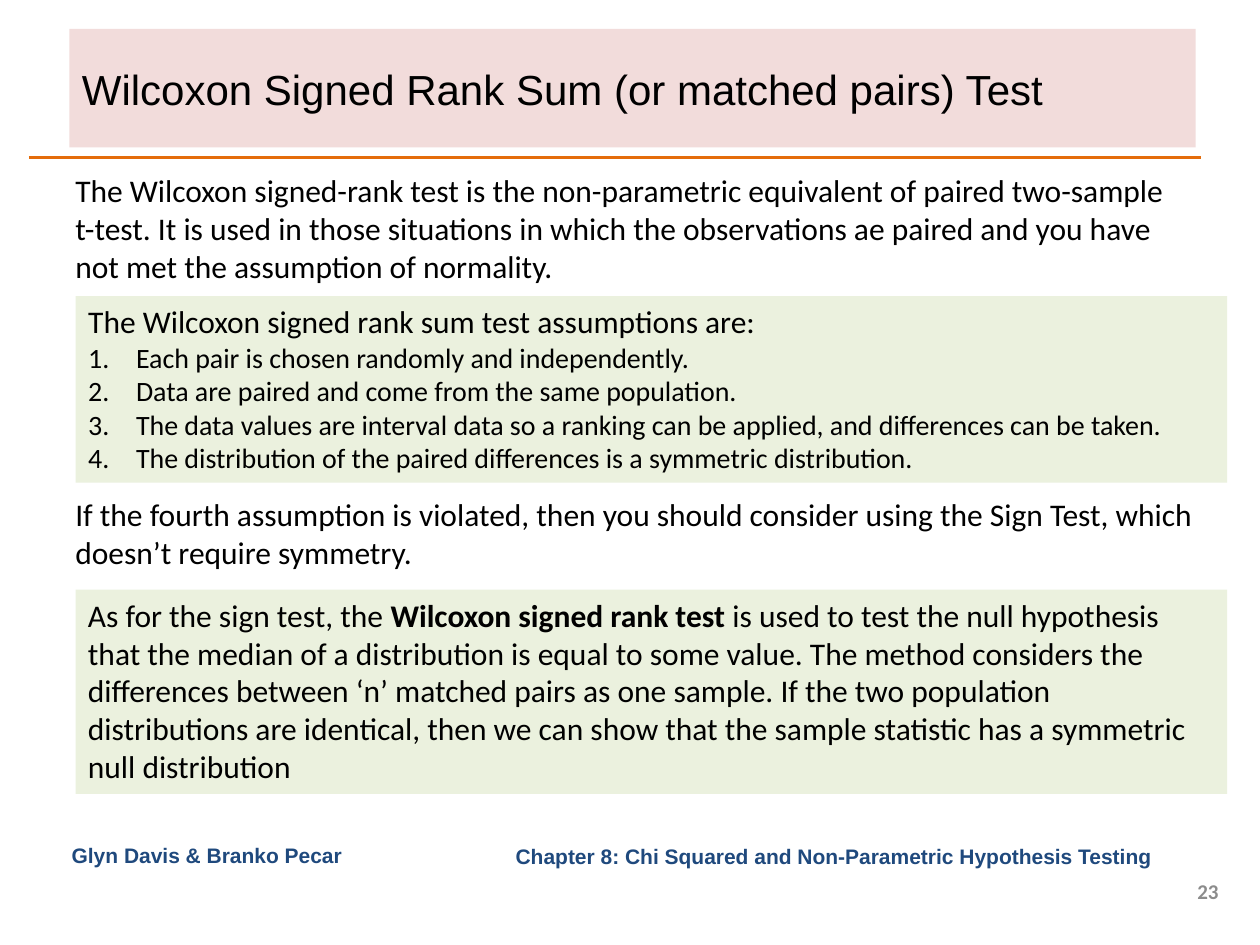
from lxml.etree import SubElement
from pptx import Presentation
from pptx.dml.color import RGBColor
from pptx.enum.shapes import MSO_CONNECTOR
from pptx.enum.text import MSO_ANCHOR, MSO_AUTO_SIZE, PP_ALIGN
from pptx.oxml.ns import qn
from pptx.util import Inches, Pt

COLORS = {"black": "000000", "rose": "F2DCDB", "sage": "EBF1DE",
          "orange": "E46C0A", "navy": "1F497D", "grey": "8C8C8C"}

presentation = Presentation()
presentation.slide_width, presentation.slide_height = Inches(10), Inches(7.5)
slide = presentation.slides.add_slide(presentation.slide_layouts[1])
shapes = slide.shapes
cell = presentation.slide_width / 100  # grid of 100 columns by 75 rows

TEXT_LEFT, PANEL_LEFT, PANEL_WIDTH = 5, 6, 91.4


def place(shape, left, top, width, height, fill=None, anchor=MSO_ANCHOR.TOP):
    """Set a shape's grid position, fill and text frame; return the frame."""
    shape.left, shape.top = int(left * cell), int(top * cell)
    shape.width, shape.height = int(width * cell), int(height * cell)
    if fill:
        shape.fill.solid()
        shape.fill.fore_color.rgb = RGBColor.from_string(COLORS[fill])
    frame = shape.text_frame
    frame.word_wrap = True
    frame.auto_size = MSO_AUTO_SIZE.NONE
    frame.vertical_anchor = anchor
    return frame


def add_run(paragraph, text, size=18, font="Calibri", color="black", bold=False):
    run = paragraph.add_run()
    run.text = text
    run.font.size, run.font.name, run.font.bold = Pt(size), font, bold
    run.font.color.rgb = RGBColor.from_string(COLORS[color])


# Title band and rule
title = place(shapes.title, 5.5, 2.3, 89.4, 9.4, "rose", MSO_ANCHOR.MIDDLE)
title.paragraphs[0].alignment = PP_ALIGN.LEFT
add_run(title.paragraphs[0], "Wilcoxon Signed Rank Sum (or matched pairs) Test", 24, "Arial")

rule = shapes.add_connector(MSO_CONNECTOR.STRAIGHT, int(2.3 * cell), int(12.5 * cell),
                            int(95.3 * cell), int(12.5 * cell))
rule.line.color.rgb = RGBColor.from_string(COLORS["orange"])
rule.line.width = Pt(2)
SubElement(rule._element.spPr, qn("a:effectLst"))

# Assumptions: a heading followed by a numbered list
assumptions = place(slide.placeholders[1], PANEL_LEFT, 23.5, PANEL_WIDTH, 14.8, "sage")
lines = ["The Wilcoxon signed rank sum test assumptions are:",
         "Each pair is chosen randomly and independently.",
         "Data are paired and come from the same population.",
         "The data values are interval data so a ranking can be applied, and differences can be taken.",
         "The distribution of the paired differences is a symmetric distribution."]
for number, line in enumerate(lines):
    paragraph = assumptions.paragraphs[0] if number == 0 else assumptions.add_paragraph()
    paragraph.space_before = Pt(0)
    add_run(paragraph, line, 16 if number else 18)
    properties = paragraph._p.get_or_add_pPr()
    indent = Inches(0.38) if number else 0
    properties.set("marL", str(indent))
    properties.set("indent", str(-indent))
    if number:
        SubElement(properties, qn("a:buFont"), typeface="+mj-lt")
        SubElement(properties, qn("a:buAutoNum"), type="arabicPeriod")
    else:
        SubElement(properties, qn("a:buNone"))

# Running text, one box per passage: position, fill, runs as (text, bold)
passages = [
    ((TEXT_LEFT, 13.1, 89.4, 10.1), None, [
        ("The Wilcoxon signed-rank test is the non-parametric equivalent of paired two-sample "
         "t-test. It is used in those situations in which the observations ae paired and you have "
         "not met the assumption of normality.", False)]),
    ((TEXT_LEFT, 38.8, PANEL_WIDTH, 7.1), None, [
        ("If the fourth assumption is violated, then you should consider using the Sign Test, "
         "which doesn’t require symmetry.", False)]),
    ((PANEL_LEFT, 46.8, PANEL_WIDTH, 16.2), "sage", [
        ("As for the sign test, the ", False),
        ("Wilcoxon signed rank test", True),
        (" is used to test the null hypothesis that the median of a distribution is equal to some "
         "value. The method considers the differences between ‘n’ matched pairs as one sample. If "
         "the two population distributions are identical, then we can show that the sample "
         "statistic has a symmetric null distribution", False)]),
]
for position, fill, runs in passages:
    frame = place(shapes.add_textbox(0, 0, 0, 0), *position, fill)
    for text, bold in runs:
        add_run(frame.paragraphs[0], text, bold=bold)

# Footer: authors, chapter and slide number
footers = [
    ((4.7, 66.4, 28.1, 3.1), MSO_ANCHOR.TOP, PP_ALIGN.LEFT,
     "Glyn Davis & Branko Pecar", "Arial", "navy"),
    ((32, 66.4, 60.9, 3.1), MSO_ANCHOR.MIDDLE, PP_ALIGN.RIGHT,
     "Chapter 8: Chi Squared and Non-Parametric Hypothesis Testing ", "Arial", "navy"),
    ((93, 69.5, 4.7, 2.4), MSO_ANCHOR.MIDDLE, PP_ALIGN.RIGHT, "23", "Calibri", "grey"),
]
for position, anchor, alignment, text, font, color in footers:
    frame = place(shapes.add_textbox(0, 0, 0, 0), *position, anchor=anchor)
    frame.paragraphs[0].alignment = alignment
    add_run(frame.paragraphs[0], text, 12, font, color, bold=True)

presentation.save("out.pptx")
